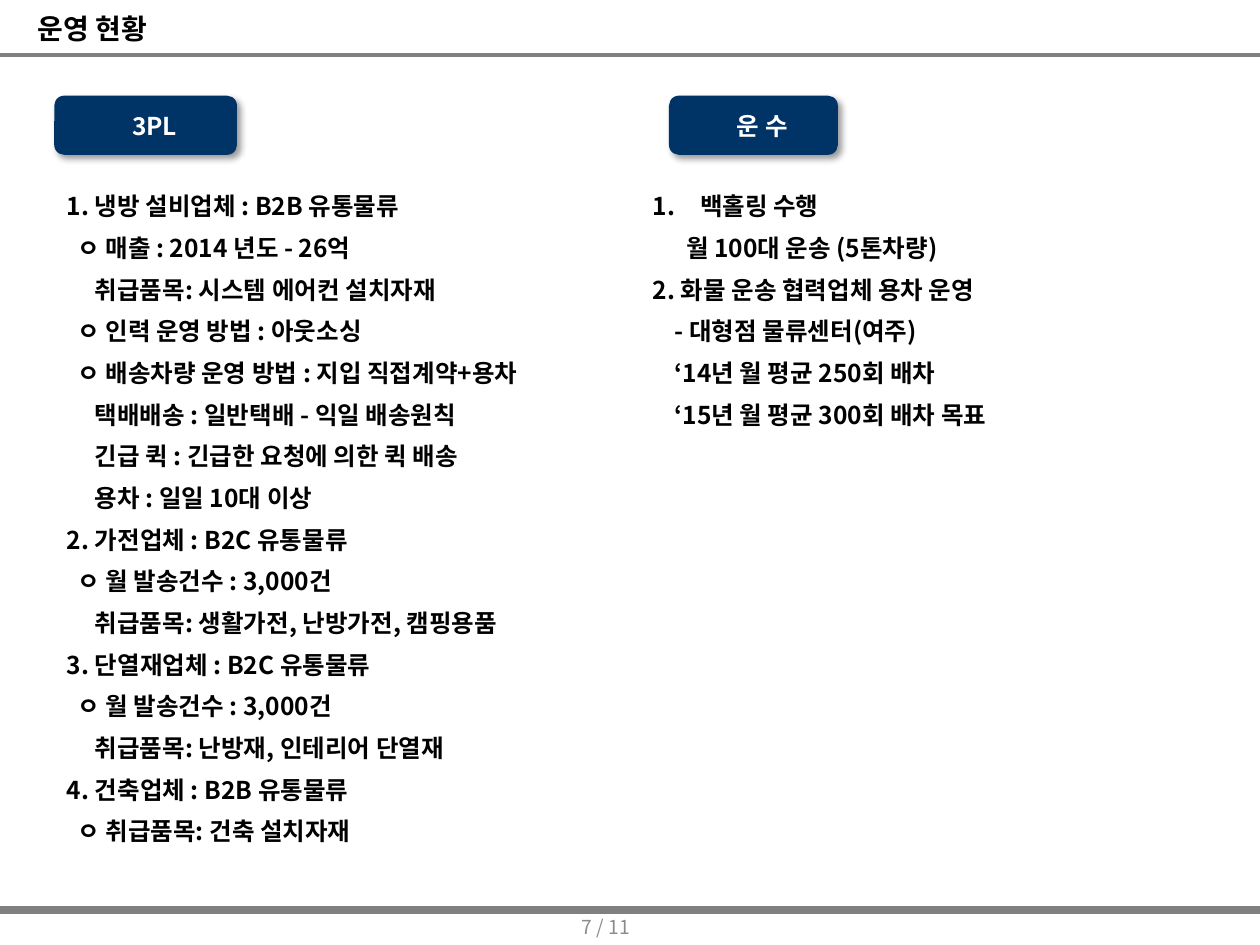
from dataclasses import dataclass

from lxml.etree import SubElement
from pptx import Presentation
from pptx.dml.color import RGBColor
from pptx.enum.shapes import MSO_CONNECTOR as Connector, MSO_SHAPE as Shape
from pptx.enum.text import MSO_ANCHOR as Anchor, MSO_AUTO_SIZE as AutoSize, PP_ALIGN as Align
from pptx.oxml.ns import qn
from pptx.util import Pt

FONT = "Noto Sans CJK KR"
COLORS = {"navy": "003366", "rule": "808080", "page": "8C8C8C",
          "ink": "000000", "white": "FFFFFF"}


@dataclass(frozen=True)
class Badge:
    label: str
    left: float
    width: float


@dataclass(frozen=True)
class Rule:
    top: float
    weight: float


@dataclass(frozen=True)
class Item:
    label: str
    margin: float = 0
    hanging: float = 0
    numbered: bool = False


@dataclass(frozen=True)
class Column:
    left: float
    width: float
    height: float
    items: tuple[Item, ...]


CIRCLE, DETAIL, RIGHT_NOTE = 6, 16, 12.5
RULES = (Rule(31.7, 2.25), Rule(519.8, 4.5))
BADGES = (Badge("3PL", 31, 104.4), Badge("운 수", 382.3, 96.5))
COLUMNS = (
    Column(31, 334.8, 406, (
        Item("1. 냉방 설비업체 : B2B 유통물류"),
        Item("ㅇ 매출 : 2014 년도 - 26억", CIRCLE),
        Item("취급품목: 시스템 에어컨 설치자재", DETAIL),
        Item("ㅇ 인력 운영 방법 : 아웃소싱", CIRCLE),
        Item("ㅇ 배송차량 운영 방법 : 지입 직접계약+용차", CIRCLE),
        Item("택배배송 : 일반택배 - 익일 배송원칙", DETAIL),
        Item("긴급 퀵 : 긴급한 요청에 의한 퀵 배송", DETAIL),
        Item("용차 : 일일 10대 이상", DETAIL),
        Item("2. 가전업체 : B2C 유통물류"),
        Item("ㅇ 월 발송건수 : 3,000건", CIRCLE),
        Item("취급품목: 생활가전, 난방가전, 캠핑용품", DETAIL),
        Item("3. 단열재업체 : B2C 유통물류"),
        Item("ㅇ 월 발송건수 : 3,000건", CIRCLE),
        Item("취급품목: 난방재, 인테리어 단열재", DETAIL),
        Item("4. 건축업체 : B2B 유통물류"),
        Item("ㅇ 취급품목: 건축 설치자재", CIRCLE),
    )),
    Column(365.8, 317.5, 151.2, (
        Item("백홀링 수행", 27, -27, True),
        Item("월 100대 운송 (5톤차량)", 19),
        Item("2. 화물 운송 협력업체 용차 운영"),
        Item("- 대형점 물류센터(여주)", RIGHT_NOTE),
        Item("‘14년 월 평균 250회 배차", RIGHT_NOTE),
        Item("‘15년 월 평균 300회 배차 목표", RIGHT_NOTE),
    )),
)


def rgb(name: str) -> RGBColor:
    return RGBColor.from_string(COLORS[name])


def format_runs(paragraph, size: float, color: str, bold: bool = True) -> None:
    for run in paragraph.runs:
        run.font.size = Pt(size)
        run.font.bold = bold
        run.font.color.rgb = rgb(color)
        run.font.name = FONT
        SubElement(run.font._element, qn("a:ea"), typeface=FONT)


def place(shape, left: float, top: float, width: float, height: float) -> None:
    shape.left, shape.top = Pt(left), Pt(top)
    shape.width, shape.height = Pt(width), Pt(height)
    shape.text_frame.auto_size = AutoSize.NONE
    shape.text_frame.vertical_anchor = Anchor.TOP


def fill_title(title) -> None:
    place(title, 14.4, 0, 250.6, 26.6)
    title.text_frame.text = "운영 현황"
    heading = title.text_frame.paragraphs[0]
    heading.alignment = Align.LEFT
    heading.line_spacing = Pt(22)
    format_runs(heading, 16, "ink")


def fill_column(body, column: Column) -> None:
    place(body, column.left, 105.8, column.width, column.height)
    frame = body.text_frame
    frame.text = "\n".join(item.label for item in column.items)
    for position, (paragraph, item) in enumerate(zip(frame.paragraphs, column.items)):
        properties = paragraph._p.get_or_add_pPr()
        properties.set("marL", str(Pt(item.margin)))
        properties.set("indent", str(Pt(item.hanging)))
        if item.numbered:
            SubElement(properties, qn("a:buFont"), typeface=FONT)
            SubElement(properties, qn("a:buAutoNum"), type="arabicPeriod")
        else:
            SubElement(properties, qn("a:buNone"))
        paragraph.alignment = Align.LEFT
        paragraph.line_spacing = Pt(16.8)
        paragraph.space_before = Pt(7 if position else 0)
        format_runs(paragraph, 14, "ink")


def draw_rule(slide, rule: Rule) -> None:
    line = slide.shapes.add_connector(
        Connector.STRAIGHT, Pt(0), Pt(rule.top), Pt(720), Pt(rule.top))
    line.line.color.rgb = rgb("rule")
    line.line.width = Pt(rule.weight)
    SubElement(line._element.spPr, qn("a:effectLst"))


def draw_badge(slide, badge: Badge) -> None:
    box = slide.shapes.add_shape(
        Shape.ROUNDED_RECTANGLE, Pt(badge.left), Pt(54.7), Pt(badge.width), Pt(33.8))
    box.fill.solid()
    box.fill.fore_color.rgb = rgb("navy")
    box.line.fill.background()
    box.shadow.inherit = False
    effects = box._element.spPr.find(qn("a:effectLst"))
    shadow = SubElement(effects, qn("a:outerShdw"), blurRad=str(Pt(4)), dist=str(Pt(3)),
                        dir=str(45 * 60000), algn="tl", rotWithShape="0")
    tint = SubElement(shadow, qn("a:srgbClr"), val=COLORS["ink"])
    SubElement(tint, qn("a:alpha"), val="40000")
    frame = box.text_frame
    frame.margin_left = Pt(17.3)
    frame.vertical_anchor = Anchor.MIDDLE
    frame.text = badge.label
    frame.paragraphs[0].alignment = Align.CENTER
    format_runs(frame.paragraphs[0], 14, "white")


def draw_page_number(slide) -> None:
    box = slide.shapes.add_textbox(Pt(0), Pt(519.1), Pt(367.2), Pt(20.9))
    frame = box.text_frame
    frame.word_wrap = True
    frame.vertical_anchor = Anchor.MIDDLE
    frame.text = "7 / 11"
    frame.paragraphs[0].alignment = Align.RIGHT
    format_runs(frame.paragraphs[0], 11, "page", bold=False)


def main() -> None:
    deck = Presentation()
    deck.slide_width, deck.slide_height = Pt(720), Pt(540)
    slide = deck.slides.add_slide(deck.slide_layouts[3])
    for rule in RULES:
        draw_rule(slide, rule)
    fill_title(slide.shapes.title)
    for badge in BADGES:
        draw_badge(slide, badge)
    for slot, column in enumerate(COLUMNS, start=1):
        fill_column(slide.placeholders[slot], column)
    draw_page_number(slide)
    deck.save("out.pptx")


if __name__ == "__main__":
    main()
